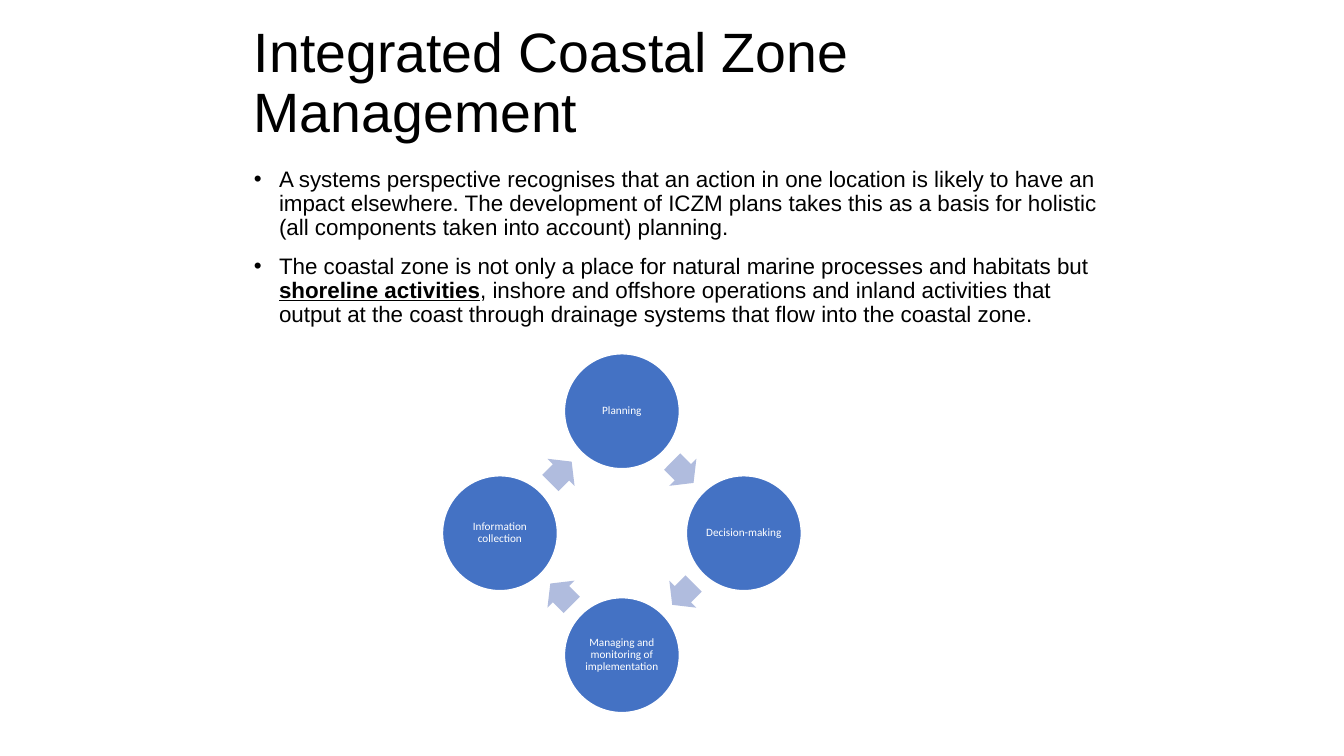
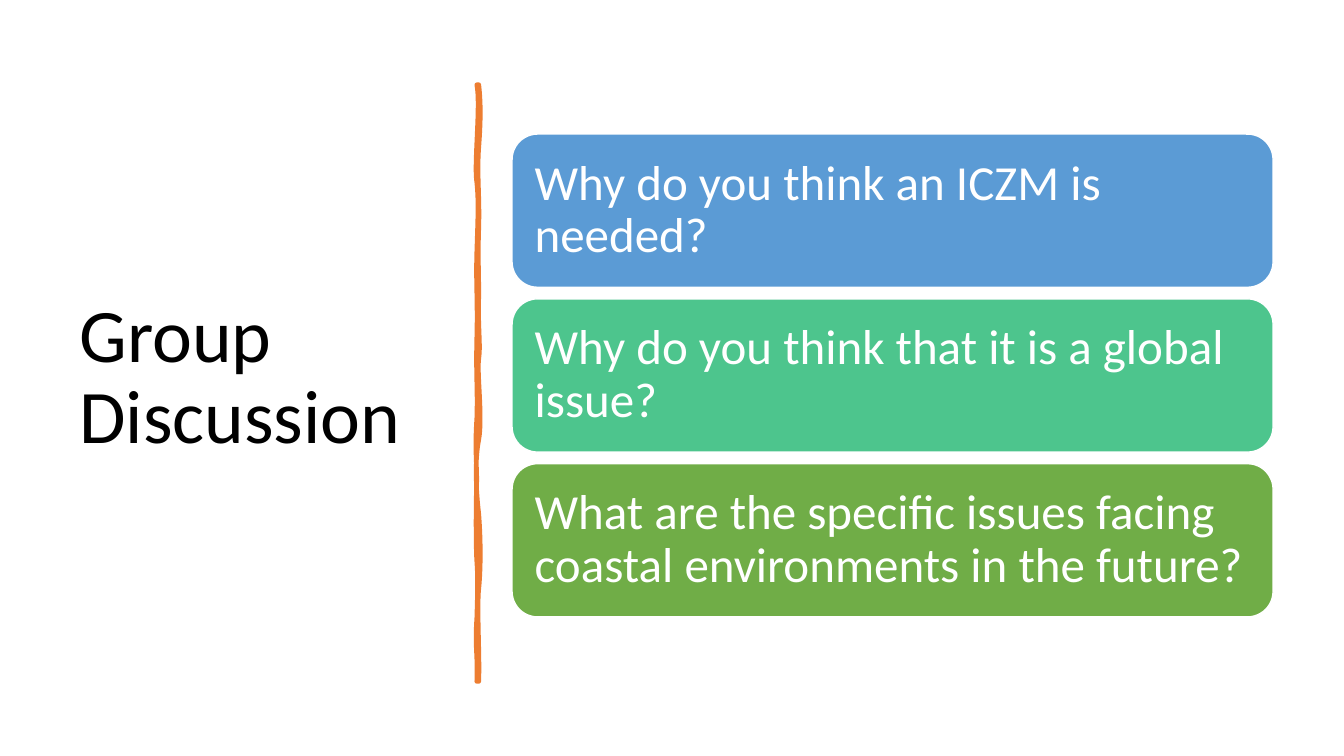
from dataclasses import dataclass
from math import cos, radians, sin

from lxml.etree import SubElement
from pptx import Presentation
from pptx.dml.color import RGBColor
from pptx.enum.shapes import MSO_SHAPE
from pptx.enum.text import MSO_ANCHOR, PP_ALIGN
from pptx.oxml.ns import qn
from pptx.util import Inches, Pt

BLACK, WHITE = "000000", "FFFFFF"
BLUE, PALE_BLUE, ORANGE = "4472C4", "B0BCDE", "ED7D31"


@dataclass(frozen=True)
class Span:
    text: str
    strong: bool = False


@dataclass(frozen=True)
class Card:
    text: str
    fill: str


@dataclass(frozen=True)
class Bend:
    x1: float
    y1: float
    x2: float
    y2: float
    end: float


@dataclass(frozen=True)
class Outline:
    right: list[Bend]
    left: list[Bend]
    attributes: dict[str, str]


STAGES = [
    "Planning",
    "Decision-making",
    "Managing and monitoring of implementation",
    "Information collection",
]
BULLETS = [
    [Span("A systems perspective recognises that an action in one location is likely to have an "
          "impact elsewhere. The development of ICZM plans takes this as a basis for holistic "
          "(all components taken into account) planning.")],
    [Span("The coastal zone is not only a place for natural marine processes and habitats but "),
     Span("shoreline activities", strong=True),
     Span(", inshore and offshore operations and inland activities that output at the coast "
          "through drainage systems that flow into the coastal zone.")],
]
CARDS = [
    Card("Why do you think an ICZM is needed?", "5B9BD5"),
    Card("Why do you think that it is a global issue?", "4DC58D"),
    Card("What are the specific issues facing coastal environments in the future?", "70AD47"),
]
RULE_LEFT, RULE_RIGHT, RULE_TOP, RULE_BOTTOM = 4.73, 4.75, 0.84, 6.76
RULE_OUTLINES = [
    Outline(
        [Bend(4.77, 1.02, 4.77, 1.19, 1.46), Bend(4.73, 1.73, 4.76, 1.95, 2.26),
         Bend(4.74, 2.57, 4.75, 2.62, 2.94), Bend(4.74, 3.25, 4.77, 3.42, 3.56),
         Bend(4.73, 3.7, 4.79, 4.14, 4.36), Bend(4.71, 4.57, 4.72, 4.84, 5.1),
         Bend(4.77, 5.36, 4.77, 5.64, 5.84), Bend(4.73, 6.03, 4.76, 6.5, RULE_BOTTOM)],
        [Bend(4.74, 6.46, 4.71, 6.44, 6.13), Bend(4.74, 5.83, 4.74, 5.7, 5.57),
         Bend(4.72, 5.44, 4.72, 4.95, 4.77), Bend(4.73, 4.59, 4.71, 4.45, 4.15),
         Bend(4.74, 3.86, 4.72, 3.73, 3.35), Bend(4.74, 2.98, 4.72, 2.81, 2.5),
         Bend(4.74, 2.18, 4.75, 2, 1.81), Bend(4.7, 1.63, 4.77, 1.04, RULE_TOP)],
        {"fill": "none"}),
    Outline(
        [Bend(4.75, 1.15, 4.72, 1.25, 1.52), Bend(4.77, 1.79, 4.74, 1.97, 2.08),
         Bend(4.76, 2.2, 4.74, 2.55, 2.94), Bend(4.76, 3.33, 4.73, 3.43, 3.62),
         Bend(4.77, 3.81, 4.77, 3.97, 4.3), Bend(4.72, 4.63, 4.75, 4.74, 5.16),
         Bend(4.75, 5.57, 4.74, 5.53, 5.78), Bend(4.76, 6.03, 4.74, 6.47, RULE_BOTTOM)],
        [Bend(4.7, 6.49, 4.74, 6.32, 6.13), Bend(4.72, 5.95, 4.75, 5.69, 5.39),
         Bend(4.71, 5.1, 4.76, 5, 4.71), Bend(4.7, 4.42, 4.77, 4.2, 3.86),
         Bend(4.69, 3.51, 4.74, 3.25, 3), Bend(4.71, 2.75, 4.71, 2.59, 2.38),
         Bend(4.74, 2.16, 4.74, 1.85, 1.64), Bend(4.71, 1.43, 4.75, 1.21, RULE_TOP)],
        {"stroke": "0"}),
]


def color(value: str) -> RGBColor:
    return RGBColor.from_string(value)


def paint(shape, *, fill: str, line: str | None = None, width: float = 1) -> None:
    shape.shadow.inherit = False
    shape.fill.solid()
    shape.fill.fore_color.rgb = color(fill)
    if line is None:
        shape.line.fill.background()
    else:
        shape.line.color.rgb = color(line)
        shape.line.width = Pt(width)


def add_bullet(para) -> None:
    properties = para._p.get_or_add_pPr()
    properties.set("marL", str(Inches(0.25)))
    properties.set("indent", str(-Inches(0.25)))
    SubElement(properties, qn("a:buFont")).set("typeface", "Arial")
    SubElement(properties, qn("a:buChar")).set("char", "•")


def write(shape, paragraphs: list[list[Span]], *, size: float, font: str = "Calibri",
          ink: str = BLACK, align=PP_ALIGN.LEFT, anchor=MSO_ANCHOR.MIDDLE,
          inset: tuple[float, float] = (0.1, 0.05), before: float = 0,
          bullet: bool = False) -> None:
    frame = shape.text_frame
    frame.word_wrap = True
    frame.vertical_anchor = anchor
    frame.margin_left = frame.margin_right = Inches(inset[0])
    frame.margin_top = frame.margin_bottom = Inches(inset[1])
    for index, spans in enumerate(paragraphs):
        para = frame.add_paragraph() if index else frame.paragraphs[0]
        para.alignment = align
        para.line_spacing = 0.9
        para.space_before = Pt(before)
        if bullet:
            add_bullet(para)
        for span in spans:
            run = para.add_run()
            run.text = span.text
            run.font.size = Pt(size)
            run.font.name = font
            run.font.color.rgb = color(ink)
            run.font.bold = span.strong
            run.font.underline = span.strong


def add_box(page, left: float, top: float, width: float, height: float):
    return page.shapes.add_textbox(Inches(left), Inches(top), Inches(width), Inches(height))


def add_centered(page, kind, x: float, y: float, width: float, height: float):
    return page.shapes.add_shape(kind, Inches(x - width / 2), Inches(y - height / 2),
                                 Inches(width), Inches(height))


def add_cycle(page, x: float, y: float) -> None:
    step = 360 / len(STAGES)
    for index, stage in enumerate(STAGES):
        angle = radians(index * step - 90)
        circle = add_centered(page, MSO_SHAPE.OVAL, x + 1.21 * cos(angle),
                              y + 1.21 * sin(angle), 1.14, 1.14)
        paint(circle, fill=BLUE, line=WHITE)
        write(circle, [[Span(stage)]], size=8, ink=WHITE, align=PP_ALIGN.CENTER,
              inset=(0.01, 0.01))
        turn = (index + 0.5) * step
        angle = radians(turn - 90)
        arrow = add_centered(page, MSO_SHAPE.RIGHT_ARROW, x + 0.855 * cos(angle),
                             y + 0.855 * sin(angle), 0.3, 0.38)
        arrow.adjustments[0], arrow.adjustments[1] = 0.6, 0.5
        arrow.rotation = turn - 90 + 90
        paint(arrow, fill=PALE_BLUE)


def add_points(parent, command: str, *points: tuple[float, float]) -> None:
    node = SubElement(parent, qn(f"a:{command}"))
    for x, y in points:
        point = SubElement(node, qn("a:pt"))
        point.set("x", str(Inches(x - RULE_LEFT)))
        point.set("y", str(Inches(y - RULE_TOP)))


def add_outline(outlines, outline: Outline) -> None:
    contour = SubElement(outlines, qn("a:path"))
    contour.set("w", str(Inches(RULE_RIGHT - RULE_LEFT)))
    contour.set("h", str(Inches(RULE_BOTTOM - RULE_TOP)))
    for name, value in outline.attributes.items():
        contour.set(name, value)
    add_points(contour, "moveTo", (RULE_RIGHT, RULE_TOP))
    for x, bends in ((RULE_RIGHT, outline.right), (RULE_LEFT, outline.left)):
        if x == RULE_LEFT:
            add_points(contour, "lnTo", (RULE_LEFT, RULE_BOTTOM))
        for bend in bends:
            add_points(contour, "cubicBezTo", (bend.x1, bend.y1), (bend.x2, bend.y2),
                       (x, bend.end))
    SubElement(contour, qn("a:close"))


def add_wavy_rule(page) -> None:
    builder = page.shapes.build_freeform(Inches(RULE_LEFT), Inches(RULE_TOP))
    builder.add_line_segments([(Inches(RULE_RIGHT), Inches(RULE_BOTTOM))])
    rule = builder.convert_to_shape()
    outlines = rule._element.find(".//" + qn("a:pathLst"))
    outlines.remove(outlines[0])
    for outline in RULE_OUTLINES:
        add_outline(outlines, outline)
    paint(rule, fill=ORANGE, line=ORANGE, width=3.25)
    SubElement(rule.line._get_or_add_ln(), qn("a:round"))


def add_title(page, text: str, area: tuple[float, float, float, float], *,
              size: float, font: str) -> None:
    write(add_box(page, *area), [[Span(text)]], size=size, font=font)


def build_management(page) -> None:
    add_title(page, "Integrated Coastal Zone Management", (2.42, 0.21, 8.5, 1.25),
              size=39.6, font="Arial")
    write(add_box(page, 2.42, 1.62, 8.66, 1.97), BULLETS, size=16, font="Arial",
          anchor=MSO_ANCHOR.TOP, before=10, bullet=True)
    add_cycle(page, 6.17, 5.29)


def build_discussion(page) -> None:
    add_title(page, "Group Discussion", (0.69, 0.7, 3.74, 6.11), size=54, font="Calibri")
    add_wavy_rule(page)
    pitch = (4.6 - 1.33) / (len(CARDS) - 1)
    for index, card in enumerate(CARDS):
        panel = page.shapes.add_shape(MSO_SHAPE.ROUNDED_RECTANGLE, Inches(5.08),
                                      Inches(1.33 + index * pitch), Inches(7.55), Inches(1.52))
        paint(panel, fill=card.fill, line=WHITE)
        write(panel, [[Span(card.text)]], size=35, ink=WHITE, inset=(0.15, 0.15))


def main() -> None:
    deck = Presentation()
    deck.slide_width, deck.slide_height = Inches(40 / 3), Inches(7.5)
    for build in (build_management, build_discussion):
        build(deck.slides.add_slide(deck.slide_layouts[6]))
    deck.save("out.pptx")


if __name__ == "__main__":
    main()
